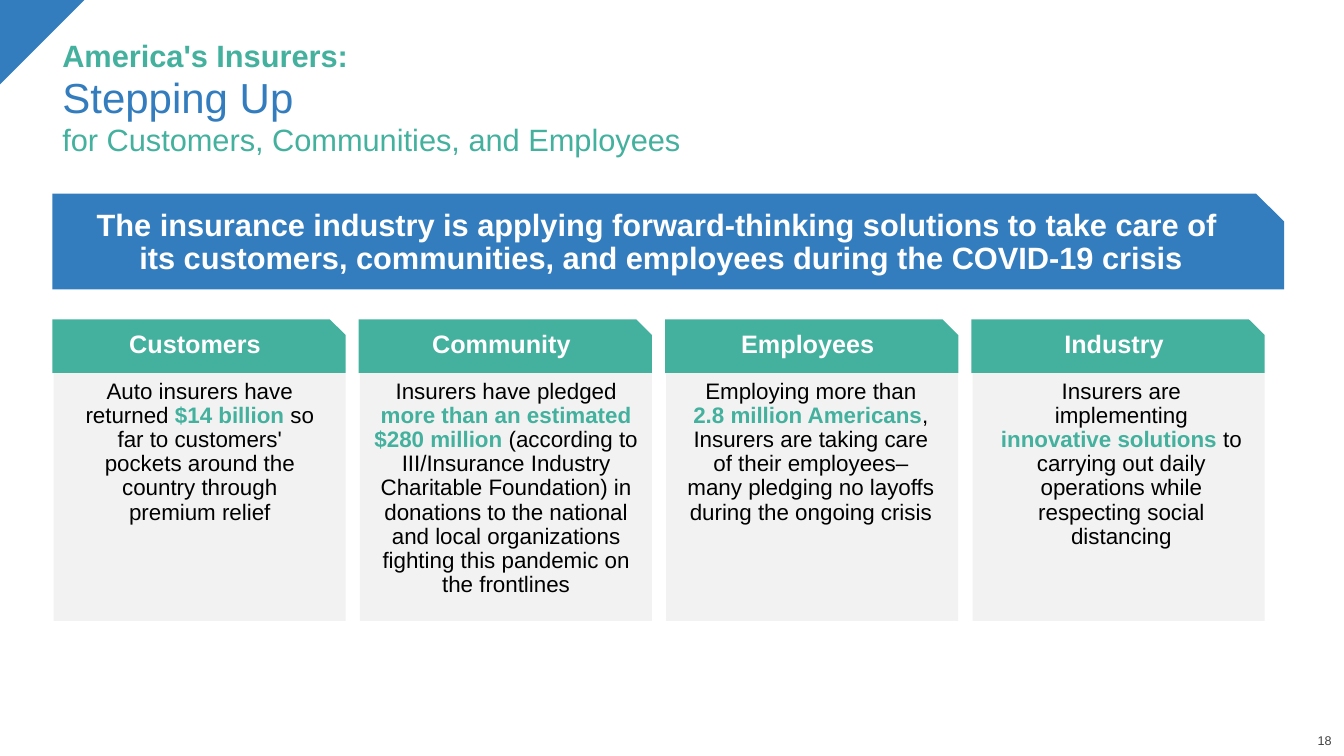
from pptx import Presentation
from pptx.dml.color import RGBColor
from pptx.enum.shapes import MSO_SHAPE
from pptx.enum.text import MSO_ANCHOR, PP_ALIGN
from pptx.util import Cm, Pt

RECTANGLE = MSO_SHAPE.RECTANGLE
SNIPPED = MSO_SHAPE.SNIP_1_RECTANGLE
TRIANGLE = MSO_SHAPE.RIGHT_TRIANGLE
LEFT, CENTER, RIGHT = PP_ALIGN.LEFT, PP_ALIGN.CENTER, PP_ALIGN.RIGHT
MIDDLE, BOTTOM = MSO_ANCHOR.MIDDLE, MSO_ANCHOR.BOTTOM

COLORS = {"blue": "337DBE", "green": "43B19E", "panel": "F2F2F2",
          "white": "FFFFFF", "black": "000000", "gray": "404040"}

deck = Presentation()
deck.slide_width, deck.slide_height = Cm(33.87), Cm(19.05)
page = deck.slides.add_slide(deck.slide_layouts[5])


def add_block(kind, left, top, width, height, color):
    block = page.shapes.add_shape(kind, Cm(left), Cm(top), Cm(width), Cm(height))
    block.shadow.inherit = False
    block.fill.solid()
    block.fill.fore_color.rgb = RGBColor.from_string(COLORS[color])
    block.line.fill.background()
    if kind == SNIPPED:
        block.adjustments[0] = 0.292
        frame = block.text_frame
        frame.vertical_anchor = MIDDLE
        frame.margin_left = frame.margin_right = frame.margin_bottom = Cm(0.51)
        frame.margin_top = Cm(0.25)
    return block


def write(box, spans, size, align=LEFT, spacing=0.9):
    """Fill the first paragraph with (text, color, bold) spans; None breaks the line."""
    box.text_frame.word_wrap = True
    para = box.text_frame.paragraphs[0]
    para.alignment = align
    para.line_spacing = spacing
    para.space_before = Pt(0)
    for item in spans:
        if item is None:
            para.add_line_break()
            continue
        text, color, bold = item
        span = para.add_run()
        span.text = text
        span.font.name = "Arial"
        span.font.size = Pt(size)
        span.font.bold = bold
        span.font.color.rgb = RGBColor.from_string(COLORS[color])


# Corner and page number
corner = add_block(TRIANGLE, 0, 0, 2.13, 2.13, "blue")
corner.rotation = 90
number = page.shapes.add_textbox(Cm(31.93), Cm(18.52), Cm(1.63), Cm(0.33))
frame = number.text_frame
frame.margin_left = frame.margin_right = frame.margin_top = frame.margin_bottom = 0
frame.vertical_anchor = BOTTOM
write(number, [("18", "gray", False)], 9, RIGHT)

# Title between its two supporting lines
title = page.shapes.title
title.left, title.top, title.width, title.height = Cm(1.32), Cm(0.64), Cm(31.32), Cm(2.64)
title.text_frame.vertical_anchor = BOTTOM
title.text_frame.margin_bottom = Cm(0.18)
write(title, [("Stepping Up", "blue", False)], 30)

for text, top, width, bold in [
    ("America's Insurers:", 0.79, 12.29, True),
    ("for Customers, Communities, and Employees", 2.92, 22.25, False),
]:
    box = page.shapes.add_textbox(Cm(1.32), Cm(top), Cm(width), Cm(1.19))
    write(box, [(text, "green", bold)], 22, spacing=1.0)

# Banner
banner = add_block(SNIPPED, 1.32, 4.88, 31.04, 2.41, "blue")
write(banner, [
    ("The insurance industry is applying forward-thinking solutions to take care of ",
     "white", True),
    None,
    ("its customers, communities, and employees during the COVID-19 crisis",
     "white", True),
], 22, CENTER)

# Columns: heading, text left, text width, text height, plain / highlighted / plain text
columns = [
    ("Customers", 1.68, 6.71, 3.96, "Auto insurers have returned ", "$14 billion ",
     "so far to customers' pockets around the country through premium relief"),
    ("Community", 9.07, 7.37, 5.79, "Insurers have pledged ",
     "more than an estimated $280 million ",
     "(according to III/Insurance Industry Charitable Foundation) in donations to the "
     "national and local organizations fighting this pandemic on the frontlines"),
    ("Employees", 17.07, 6.73, 4.57, "Employing more than ", "2.8 million Americans",
     ", Insurers are taking care of their employees–many pledging no layoffs "
     "during the ongoing crisis"),
    ("Industry", 24.97, 6.58, 4.57, "Insurers are implementing ", "innovative solutions ",
     "to carrying out daily operations while respecting social distancing"),
]
for index, (heading, left, width, height, start, highlight, end) in enumerate(columns):
    column_left = 1.32 + 7.72 * index
    add_block(RECTANGLE, column_left + 0.03, 9.4, 7.36, 6.25, "panel")
    header = add_block(SNIPPED, column_left, 8.05, 7.39, 1.35, "green")
    write(header, [(heading, "white", True)], 18, CENTER)
    body = page.shapes.add_textbox(Cm(left), Cm(9.45), Cm(width), Cm(height))
    write(body, [(start, "black", False), (highlight, "green", True),
                 (end, "black", False)], 16, CENTER)

deck.save("out.pptx")
